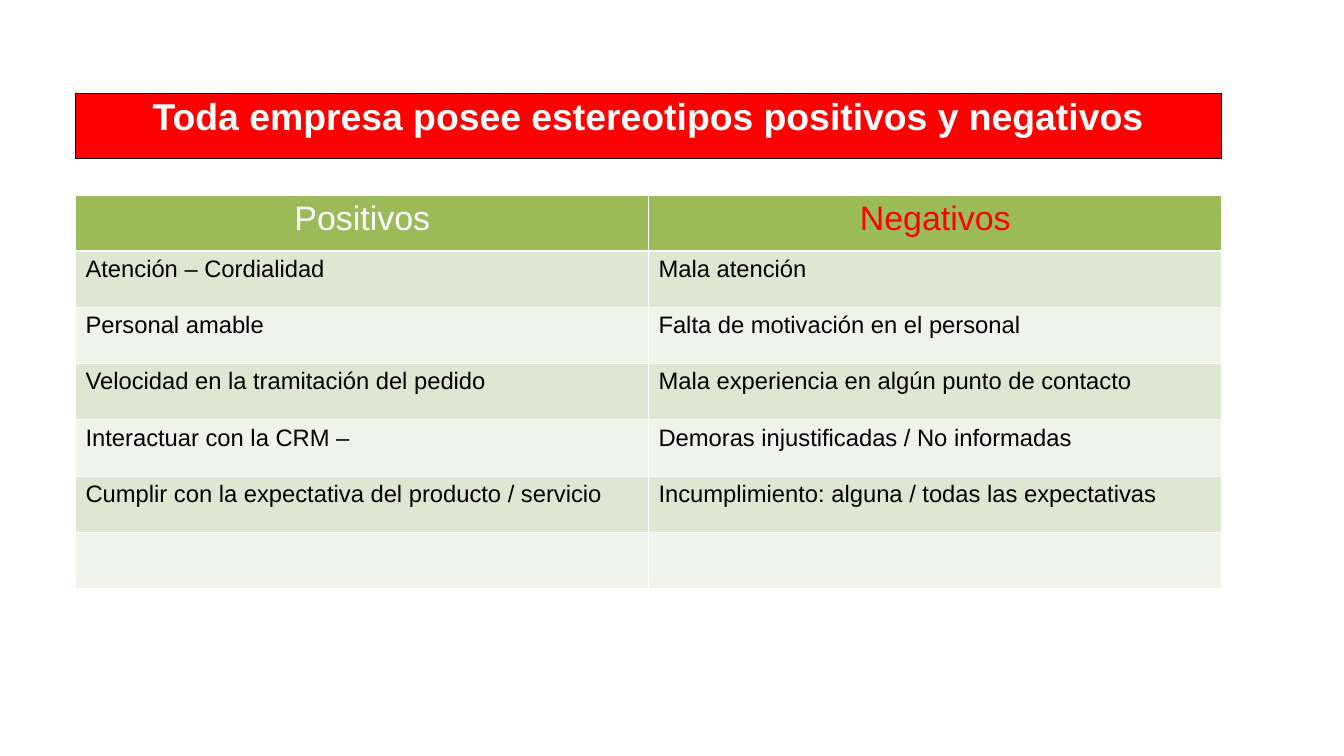
from lxml import etree
from pptx import Presentation
from pptx.dml.color import RGBColor
from pptx.enum.shapes import MSO_SHAPE
from pptx.enum.text import MSO_ANCHOR, PP_ALIGN
from pptx.oxml.ns import qn
from pptx.util import Inches, Pt

RECTANGLE = MSO_SHAPE.RECTANGLE
TOP = MSO_ANCHOR.TOP
LEFT = PP_ALIGN.LEFT
CENTER = PP_ALIGN.CENTER

WHITE = RGBColor(0xFF, 0xFF, 0xFF)
BLACK = RGBColor(0x00, 0x00, 0x00)
RED = RGBColor(0xFF, 0x00, 0x00)
GREEN = RGBColor(0x9B, 0xBB, 0x59)
BANDS = (RGBColor(0xDE, 0xE7, 0xD1), RGBColor(0xEF, 0xF3, 0xEA))

CONTENT_LEFT = Inches(1.24)
CONTENT_WIDTH = Inches(18.75)
ROW_HEIGHT = Inches(0.92)
HEADER_BORDERS = {"a:lnL": 1, "a:lnR": 1, "a:lnT": 1, "a:lnB": 3}
CELL_MARGINS = {
    "margin_left": Inches(0.16),
    "margin_right": Inches(0.16),
    "margin_top": Inches(0.08),
    "margin_bottom": Inches(0.08),
}
TITLE_FRAME = {
    "margin_left": 0,
    "margin_right": 0,
    "margin_top": 0,
    "margin_bottom": 0,
    "vertical_anchor": TOP,
    "word_wrap": True,
}

TITLE = "Toda empresa posee estereotipos positivos y negativos"
HEADERS = (("Positivos", WHITE), ("Negativos", RED))
STEREOTYPES = (
    ("Atención – Cordialidad", "Mala atención"),
    ("Personal amable", "Falta de motivación en el personal"),
    ("Velocidad en la tramitación del pedido", "Mala experiencia en algún punto de contacto"),
    ("Interactuar con la CRM –", "Demoras injustificadas / No informadas"),
    ("Cumplir con la expectativa del producto / servicio", "Incumplimiento: alguna / todas las expectativas"),
    ("", ""),
)


def set_attributes(target, values):
    for name, value in values.items():
        setattr(target, name, value)


def write_text(text_frame, text, size, color, alignment=LEFT, bold=False):
    paragraph = text_frame.paragraphs[0]
    paragraph.text = text
    paragraph.alignment = alignment
    set_attributes(paragraph.font, {"name": "Arial", "size": Pt(size), "bold": bold})
    paragraph.font.color.rgb = color


def add_title(slide):
    shape = slide.shapes.add_shape(RECTANGLE, CONTENT_LEFT, Inches(1.53), CONTENT_WIDTH, Inches(1.06))
    shape.shadow.inherit = False
    shape.fill.solid()
    shape.fill.fore_color.rgb = RED
    shape.line.color.rgb = BLACK
    shape.line.width = Pt(0.75)
    set_attributes(shape.text_frame, TITLE_FRAME)
    write_text(shape.text_frame, TITLE, 44, WHITE, CENTER, True)


def add_borders(cell, widths):
    properties = cell._tc.get_or_add_tcPr()
    for tag, width in widths.items():
        line = etree.SubElement(properties, qn(tag), w=str(Pt(width)))
        fill = etree.SubElement(line, qn("a:solidFill"))
        etree.SubElement(fill, qn("a:srgbClr"), val=str(WHITE))


def fill_cell(cell, text, fill, size, color, alignment=LEFT):
    set_attributes(cell, CELL_MARGINS)
    cell.fill.solid()
    cell.fill.fore_color.rgb = fill
    write_text(cell.text_frame, text, size, color, alignment)


def add_stereotype_table(slide):
    row_count = len(STEREOTYPES) + 1
    table = slide.shapes.add_table(
        row_count, len(HEADERS), CONTENT_LEFT, Inches(3.19), CONTENT_WIDTH, ROW_HEIGHT * row_count
    ).table
    for column, (text, color) in enumerate(HEADERS):
        cell = table.cell(0, column)
        add_borders(cell, HEADER_BORDERS)
        fill_cell(cell, text, GREEN, 40, color, CENTER)
    for row, texts in enumerate(STEREOTYPES, start=1):
        band = BANDS[(row - 1) % len(BANDS)]
        for column, text in enumerate(texts):
            fill_cell(table.cell(row, column), text, band, 28, BLACK)


def main():
    presentation = Presentation()
    presentation.slide_width = Inches(21.99)
    presentation.slide_height = Inches(12.37)
    slide = presentation.slides.add_slide(presentation.slide_layouts[6])
    add_title(slide)
    add_stereotype_table(slide)
    presentation.save("out.pptx")


if __name__ == "__main__":
    main()
